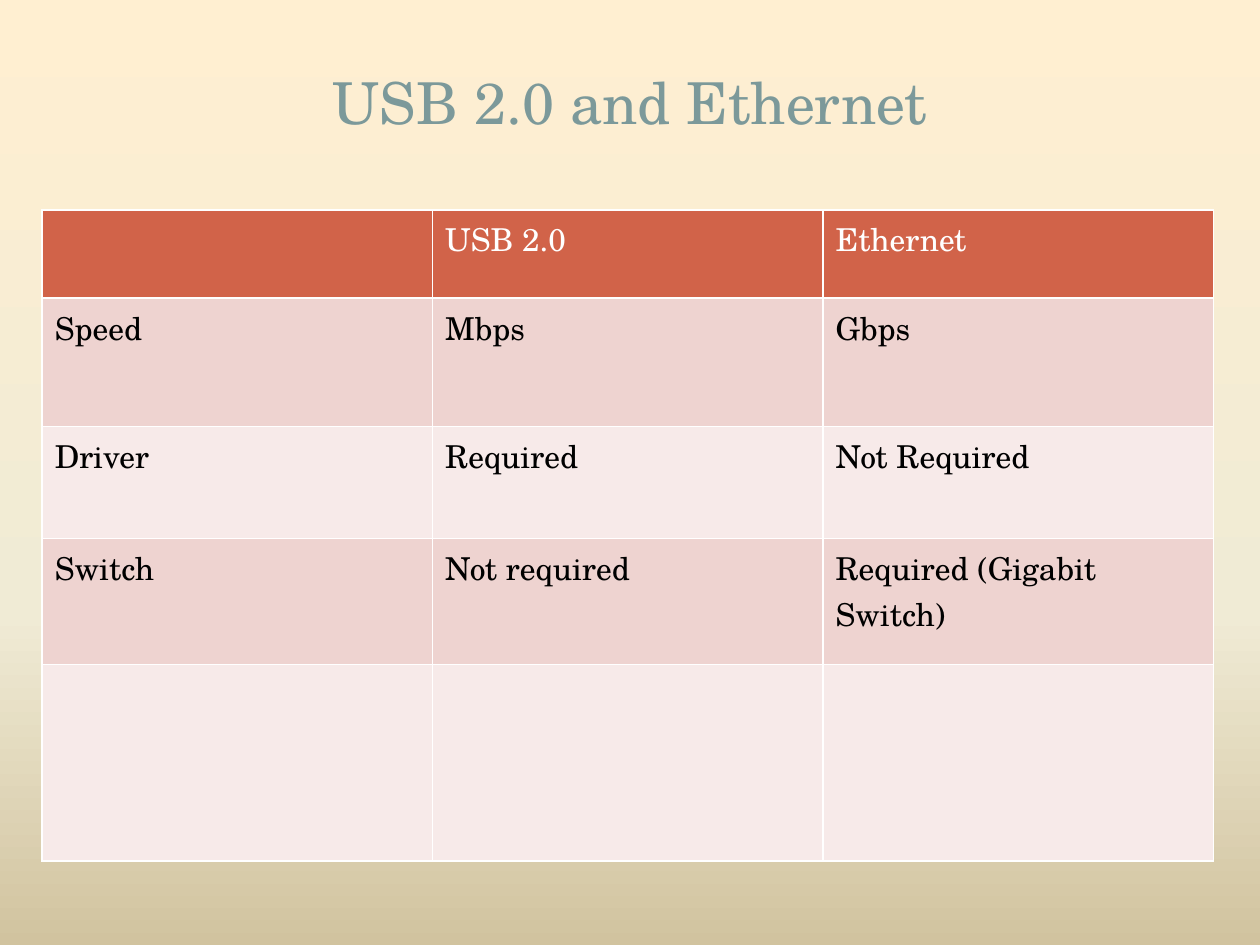
from copy import deepcopy
from dataclasses import dataclass

from lxml import etree
from pptx import Presentation
from pptx import util as u
from pptx.dml.color import RGBColor
from pptx.enum import text
from pptx.oxml.ns import qn


@dataclass(frozen=True)
class Theme:
    font: str = "TeX Gyre Schola"
    title_size: int = 33
    cell_size: int = 18
    title: str = "7C999A"
    header_fill: str = "D16349"
    header_text: str = "FFFFFF"
    body_text: str = "000000"
    bands: tuple = ("EED3D0", "F7EAE9")
    border: str = "FFFFFF"
    border_width: int = 1
    backdrop: tuple = ((0, "FFEFD1"), (0.65, "F0EBD5"), (1, "D1C39F"))


@dataclass(frozen=True)
class Row:
    height: float  # cm
    labels: tuple


THEME = Theme()
LEFT = 0.85
COLUMN_WIDTH = 7.87
COMPARISON = (
    Row(1.78, ("", "USB 2.0", "Ethernet")),
    Row(2.59, ("Speed", "Mbps", "Gbps")),
    Row(2.26, ("Driver", "Required", "Not Required")),
    Row(2.54, ("Switch", "Not required", "Required (Gigabit Switch)")),
    Row(3.96, ("", "", "")),
)


def style_runs(paragraph, size: int, color: str) -> None:
    for run in paragraph.runs:
        run.font.name = THEME.font
        run.font.size = u.Pt(size)
        run.font.bold = False
        run.font.color.rgb = RGBColor.from_string(color)


def paint_backdrop(slide) -> None:
    fill = slide.background.fill
    fill.gradient()
    fill.gradient_angle = 270  # top to bottom
    stop_list = next(slide.element.iter(qn("a:gsLst")))
    stop_list.insert(1, deepcopy(stop_list[0]))
    for stop, (position, color) in zip(fill.gradient_stops, THEME.backdrop):
        stop.position = position
        stop.color.rgb = RGBColor.from_string(color)


def add_heading(slide, wording: str) -> None:
    heading = slide.shapes.title
    heading.left, heading.top = u.Cm(LEFT), u.Cm(0.64)
    heading.width, heading.height = u.Cm(23.7), u.Cm(2.11)
    frame = heading.text_frame
    frame.text = wording
    frame.vertical_anchor = text.MSO_ANCHOR.BOTTOM
    frame.margin_bottom = 0
    frame.paragraphs[0].alignment = text.PP_ALIGN.CENTER
    style_runs(frame.paragraphs[0], THEME.title_size, THEME.title)


def outline_cell(cell) -> None:
    properties = cell._tc.get_or_add_tcPr()
    for side in ("a:lnL", "a:lnR", "a:lnT", "a:lnB"):
        line = etree.SubElement(properties, qn(side), w=str(u.Pt(THEME.border_width)))
        solid = etree.SubElement(line, qn("a:solidFill"))
        etree.SubElement(solid, qn("a:srgbClr"), val=THEME.border)


def fill_cell(cell, label: str, fill: str, color: str) -> None:
    outline_cell(cell)
    cell.fill.solid()
    cell.fill.fore_color.rgb = RGBColor.from_string(fill)
    cell.text_frame.text = label
    style_runs(cell.text_frame.paragraphs[0], THEME.cell_size, color)


def add_comparison(slide, rows: tuple[Row, ...]) -> None:
    columns = len(rows[0].labels)
    grid = slide.shapes.add_table(
        len(rows), columns, u.Cm(LEFT), u.Cm(4.23),
        u.Cm(COLUMN_WIDTH * columns), u.Cm(sum(row.height for row in rows)),
    ).table
    for column in grid.columns:
        column.width = u.Cm(COLUMN_WIDTH)
    for index, row in enumerate(rows):
        grid.rows[index].height = u.Cm(row.height)
        if index == 0:
            fill, color = THEME.header_fill, THEME.header_text
        else:
            fill, color = THEME.bands[(index - 1) % 2], THEME.body_text
        for cell, label in zip(grid.rows[index].cells, row.labels):
            fill_cell(cell, label, fill, color)


def main() -> None:
    deck = Presentation()
    deck.slide_width, deck.slide_height = u.Cm(25.4), u.Cm(19.05)
    slide = deck.slides.add_slide(deck.slide_layouts.get_by_name("Title Only"))

    # Background, heading and comparison table
    paint_backdrop(slide)
    add_heading(slide, "USB 2.0 and Ethernet")
    add_comparison(slide, COMPARISON)

    deck.save("out.pptx")


if __name__ == "__main__":
    main()
